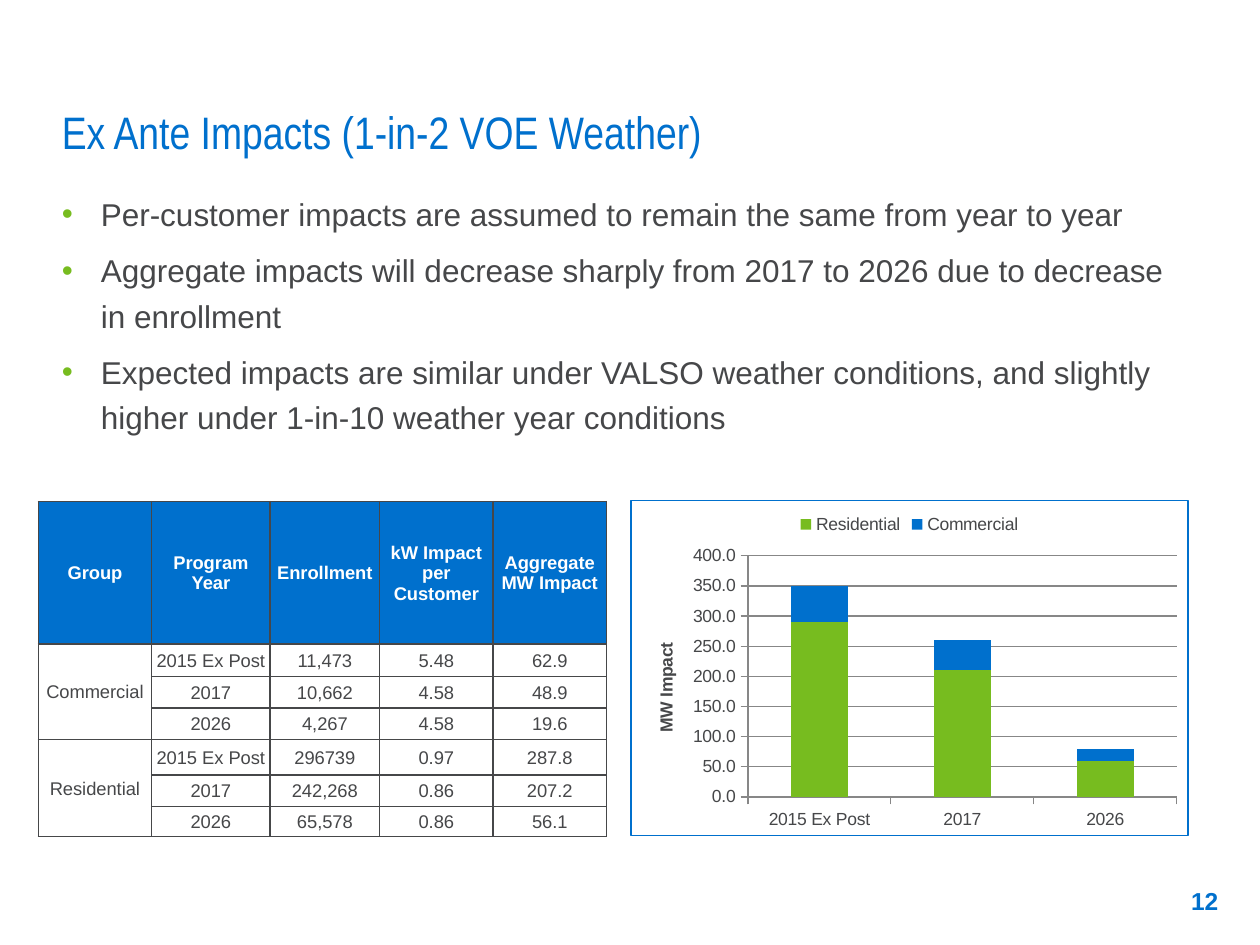
from dataclasses import dataclass

from lxml import etree
from pptx import Presentation
from pptx.chart.data import CategoryChartData
from pptx.dml.color import RGBColor
from pptx.enum.chart import XL_CHART_TYPE, XL_LEGEND_POSITION, XL_TICK_MARK
from pptx.enum.text import MSO_ANCHOR, PP_ALIGN
from pptx.oxml import parse_xml
from pptx.oxml.ns import nsdecls, qn
from pptx.util import Emu, Inches, Pt

STACKED = XL_CHART_TYPE.COLUMN_STACKED
LEGEND_TOP = XL_LEGEND_POSITION.TOP
TICK_OUT = XL_TICK_MARK.OUTSIDE
MIDDLE, BOTTOM, TOP = MSO_ANCHOR.MIDDLE, MSO_ANCHOR.BOTTOM, MSO_ANCHOR.TOP
CENTER, LEFT, RIGHT = PP_ALIGN.CENTER, PP_ALIGN.LEFT, PP_ALIGN.RIGHT

BLUE = RGBColor(0x00, 0x70, 0xCD)
GREEN = RGBColor(0x77, 0xBC, 0x1F)
DARK = RGBColor(0x46, 0x47, 0x49)
GRAY = RGBColor(0x87, 0x87, 0x87)
WHITE = RGBColor(0xFF, 0xFF, 0xFF)

SLIDE_W, SLIDE_H = Inches(10), Inches(7.5)


@dataclass(frozen=True)
class Box:
    """Position and size in percent of the slide's width and height."""
    x: float
    y: float
    w: float
    h: float

    def emu(self) -> tuple:
        return tuple(Emu(round(share * side / 100)) for share, side in
                     zip((self.x, self.y, self.w, self.h), (SLIDE_W, SLIDE_H) * 2))


@dataclass(frozen=True)
class Style:
    size: float
    color: RGBColor
    bold: bool = False
    font: str = "Arial"
    align: PP_ALIGN = LEFT


@dataclass(frozen=True)
class Group:
    name: str
    rows: tuple


TITLE_BOX = Box(4.9, 7.6, 90.1, 9.87)
BODY_BOX = Box(4.9, 19.2, 90.1, 70.13)
NUMBER_BOX = Box(90.6, 92.67, 7, 5.33)
TABLE_BOX = Box(3.04, 53.07, 45.1, 35.47)
CHART_BOX = Box(50.03, 52.9, 44.3, 35.6)

TITLE_STYLE = Style(26, BLUE, font="Arial Narrow")
BODY_STYLE = Style(18, DARK)
NUMBER_STYLE = Style(14, BLUE, bold=True, align=RIGHT)
HEADER_STYLE = Style(10.5, WHITE, bold=True, align=CENTER)
CELL_STYLE = Style(10.5, DARK, align=CENTER)

BULLETS = (
    "Per-customer impacts are assumed to remain the same from year to year",
    "Aggregate impacts will decrease sharply from 2017 to 2026 due to decrease in enrollment",
    "Expected impacts are similar under VALSO weather conditions, and slightly "
    "higher under 1-in-10 weather year conditions",
)
HEADERS = ("Group", "Program Year", "Enrollment", "kW Impact per Customer",
           "Aggregate MW Impact")
COL_WIDTHS = (0.9, 0.94, 0.87, 0.9, 0.9)
ROW_HEIGHTS = (1.13, 0.26, 0.25, 0.25, 0.28, 0.25, 0.24)
COMMERCIAL = Group("Commercial", (
    ("2015 Ex Post", "11,473", "5.48", "62.9"),
    ("2017", "10,662", "4.58", "48.9"),
    ("2026", "4,267", "4.58", "19.6"),
))
RESIDENTIAL = Group("Residential", (
    ("2015 Ex Post", "296739", "0.97", "287.8"),
    ("2017", "242,268", "0.86", "207.2"),
    ("2026", "65,578", "0.86", "56.1"),
))


def style_paragraph(p, style: Style) -> None:
    p.alignment = style.align
    for r in p.runs:
        r.font.size = Pt(style.size)
        r.font.name = style.font
        r.font.bold = style.bold
        r.font.color.rgb = style.color


def set_frame(tf, anchor: MSO_ANCHOR, left: float, right: float, edge: float) -> None:
    tf.word_wrap = True
    tf.vertical_anchor = anchor
    tf.margin_left, tf.margin_right = Inches(left), Inches(right)
    tf.margin_top = tf.margin_bottom = Inches(edge)


def add_bullet(p, color: RGBColor) -> None:
    pPr = p._p.get_or_add_pPr()
    pPr.set("marL", str(Inches(0.31)))
    pPr.set("indent", str(-Inches(0.31)))
    clr = etree.SubElement(pPr, qn("a:buClr"))
    etree.SubElement(clr, qn("a:srgbClr"), val=str(color))
    etree.SubElement(pPr, qn("a:buFont"), typeface="Arial")
    etree.SubElement(pPr, qn("a:buChar"), char="•")


def add_title(slide, text: str) -> None:
    sp = slide.shapes.title
    sp.left, sp.top, sp.width, sp.height = TITLE_BOX.emu()
    set_frame(sp.text_frame, BOTTOM, 0, 0.1, 0.05)
    sp.text_frame.text = text
    style_paragraph(sp.text_frame.paragraphs[0], TITLE_STYLE)


def add_body(slide) -> None:
    tf = slide.shapes.add_textbox(*BODY_BOX.emu()).text_frame
    set_frame(tf, TOP, 0, 0.1, 0.05)
    tf.text = "\n".join(BULLETS)
    for i, p in enumerate(tf.paragraphs):
        add_bullet(p, GREEN)
        p.line_spacing = 1.2
        p.space_before = Pt(3.6 if i else 0)
        p.space_after = Pt(2.6)
        style_paragraph(p, BODY_STYLE)


def add_slide_number(slide, text: str) -> None:
    tf = slide.shapes.add_textbox(*NUMBER_BOX.emu()).text_frame
    set_frame(tf, MIDDLE, 0.09, 0.09, 0.04)
    tf.text = text
    style_paragraph(tf.paragraphs[0], NUMBER_STYLE)


def format_cell(cell, style: Style, fill: RGBColor | None) -> None:
    tcPr = cell._tc.get_or_add_tcPr()
    for side in ("lnL", "lnR", "lnT", "lnB"):
        ln = etree.SubElement(tcPr, qn(f"a:{side}"), w=str(Pt(1)))
        solid = etree.SubElement(ln, qn("a:solidFill"))
        etree.SubElement(solid, qn("a:srgbClr"), val=str(DARK))
    if fill is None:
        cell.fill.background()
    else:
        cell.fill.solid()
        cell.fill.fore_color.rgb = fill
    cell.vertical_anchor = MIDDLE
    cell.margin_left = cell.margin_right = cell.margin_top = Inches(0.01)
    cell.margin_bottom = 0
    style_paragraph(cell.text_frame.paragraphs[0], style)


def add_impact_table(slide, groups: tuple) -> None:
    rows = [HEADERS] + [(g.name if i == 0 else "", *row)
                        for g in groups for i, row in enumerate(g.rows)]
    table = slide.shapes.add_table(len(rows), len(HEADERS), *TABLE_BOX.emu()).table
    for col, width in zip(table.columns, COL_WIDTHS):
        col.width = Inches(width)
    for row, height in zip(table.rows, ROW_HEIGHTS):
        row.height = Inches(height)
    for r, values in enumerate(rows):
        for c, value in enumerate(values):
            cell = table.cell(r, c)
            cell.text = value
            format_cell(cell, CELL_STYLE if r else HEADER_STYLE, None if r else BLUE)
    first = 1
    for g in groups:
        last = first + len(g.rows) - 1
        table.cell(first, 0).merge(table.cell(last, 0))
        first = last + 1


def frame_chart(chart) -> None:
    """Outline the chart area and fix the inner plot area."""
    chart._chartSpace.find(qn("c:chart")).addnext(parse_xml(
        f'<c:spPr {nsdecls("c", "a")}><a:noFill/><a:ln w="{Pt(0.75)}"><a:solidFill>'
        f'<a:srgbClr val="{BLUE}"/></a:solidFill></a:ln></c:spPr>'))
    plot_area = chart._chartSpace.find(".//" + qn("c:plotArea"))
    for old in plot_area.findall(qn("c:layout")):
        plot_area.remove(old)
    layout = etree.Element(qn("c:layout"))
    manual = etree.SubElement(layout, qn("c:manualLayout"))
    for tag, val in (("layoutTarget", "inner"), ("xMode", "edge"), ("yMode", "edge"),
                     ("x", "0.21"), ("y", "0.165"), ("w", "0.77"), ("h", "0.72")):
        etree.SubElement(manual, qn(f"c:{tag}"), val=val)
    plot_area.insert(0, layout)


def add_impact_chart(slide, series: tuple) -> None:
    """Stack each group's aggregate impact, rounded to tens of MW."""
    data = CategoryChartData(number_format="0.0")
    data.categories = [row[0] for row in series[0][0].rows]
    for group, _ in series:
        data.add_series(group.name, [round(float(row[-1]), -1) for row in group.rows])
    chart = slide.shapes.add_chart(STACKED, *CHART_BOX.emu(), data).chart
    chart.font.size, chart.font.name = Pt(10), "Arial"
    chart.font.color.rgb = DARK
    chart.has_title = False
    chart.has_legend = True
    chart.legend.position = LEGEND_TOP
    chart.legend.include_in_layout = False
    plot = chart.plots[0]
    plot.gap_width, plot.overlap, plot.vary_by_categories = 150, 100, False
    for ser, (_, color) in zip(plot.series, series):
        ser.format.fill.solid()
        ser.format.fill.fore_color.rgb = color
    axis = chart.value_axis
    axis.minimum_scale, axis.maximum_scale, axis.major_unit = 0, 400, 50
    axis.tick_labels.number_format = "0.0"
    axis.tick_labels.number_format_is_linked = False
    axis.axis_title.text_frame.text = "MW Impact"
    style_paragraph(axis.axis_title.text_frame.paragraphs[0],
                    Style(10, DARK, bold=True, align=CENTER))
    axis.major_gridlines.format.line.color.rgb = GRAY
    for ax in (axis, chart.category_axis):
        ax.major_tick_mark = TICK_OUT
        ax.format.line.color.rgb = GRAY
    frame_chart(chart)


def main() -> None:
    prs = Presentation()
    prs.slide_width, prs.slide_height = SLIDE_W, SLIDE_H
    slide = prs.slides.add_slide(prs.slide_layouts[5])
    add_title(slide, "Ex Ante Impacts (1-in-2 VOE Weather)")
    add_body(slide)
    add_slide_number(slide, "12")
    add_impact_table(slide, (COMMERCIAL, RESIDENTIAL))
    add_impact_chart(slide, ((RESIDENTIAL, GREEN), (COMMERCIAL, BLUE)))
    prs.save("out.pptx")


if __name__ == "__main__":
    main()
